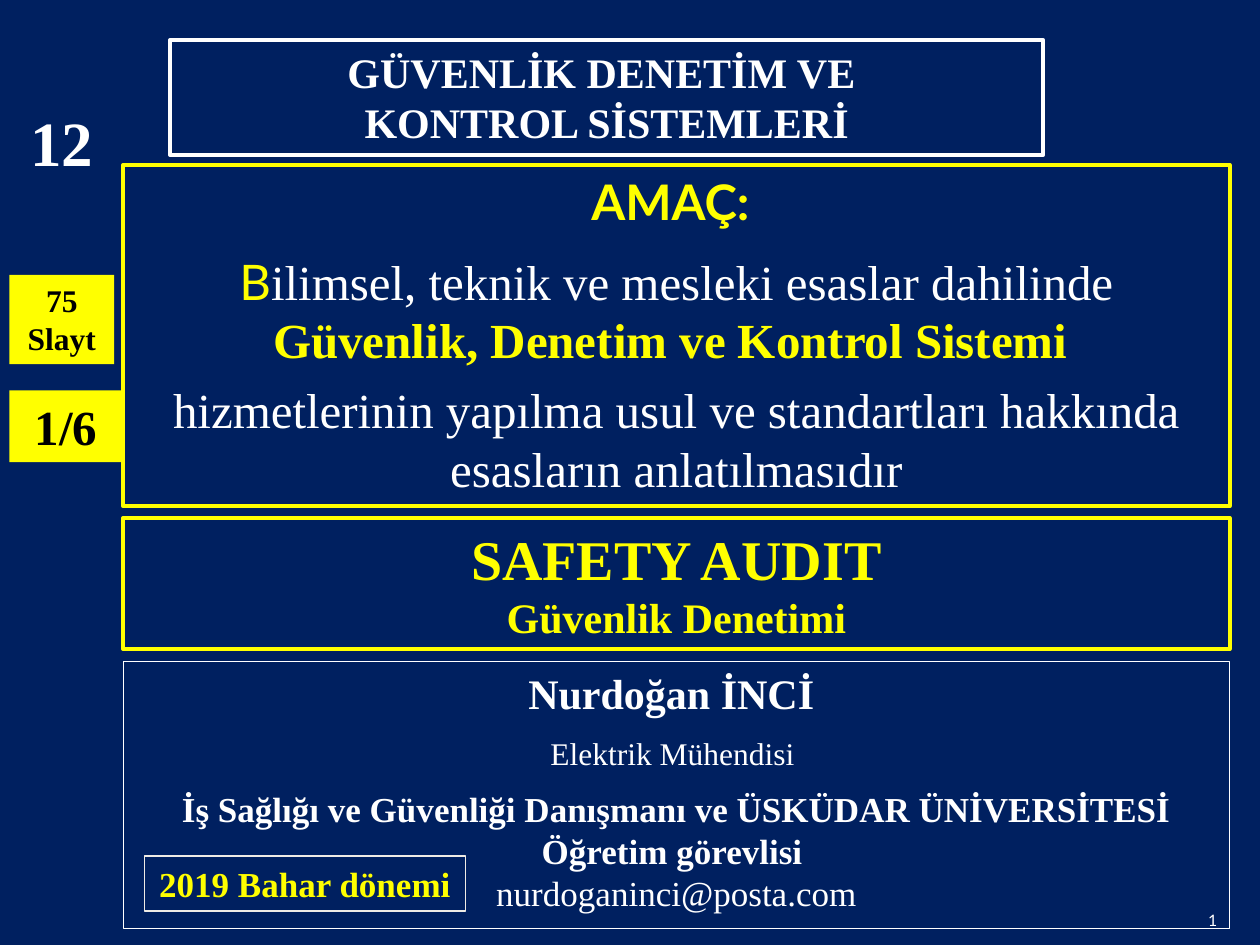
from pptx import Presentation
from pptx.dml.color import RGBColor
from pptx.enum.shapes import MSO_SHAPE as Shape
from pptx.enum.text import MSO_ANCHOR as Anchor, MSO_AUTO_SIZE as AutoSize, PP_ALIGN as Align
from pptx.util import Pt

COLORS = {"navy": "002060", "white": "FFFFFF", "yellow": "FFFF00",
          "black": "000000", "cream": "EFEBE5"}
SERIF, SANS = "Times New Roman", "Lato"


def rgb(name):
    return RGBColor.from_string(COLORS[name])


def style(font, size, color, bold=True, name=SERIF):
    font.size, font.bold, font.name = Pt(size), bold, name
    font.color.rgb = rgb(color)


def place(shape, box):
    shape.left, shape.top, shape.width, shape.height = (Pt(value) for value in box)


def prepare_frame(shape, anchor=Anchor.TOP):
    frame = shape.text_frame
    frame.word_wrap = True
    frame.auto_size = AutoSize.NONE
    frame.vertical_anchor = anchor
    return frame


def outline(shape, color, width):
    shape.line.color.rgb = rgb(color)
    shape.line.width = Pt(width)


def add_panel(slide, box, line=None, width=0, fill=None):
    shape = slide.shapes.add_shape(Shape.RECTANGLE, 0, 0, 0, 0)
    place(shape, box)
    shape.shadow.inherit = False
    if fill:
        shape.fill.solid()
        shape.fill.fore_color.rgb = rgb(fill)
    else:
        shape.fill.background()
    if line:
        outline(shape, line, width)
    else:
        shape.line.fill.background()
    return prepare_frame(shape)


def add_paragraph(frame, text, size, color, bold=True, name=SERIF,
                  before=0, align=Align.CENTER):
    first = frame.paragraphs[0]
    paragraph = frame.add_paragraph() if first.runs else first
    paragraph.alignment = align
    paragraph.space_before = Pt(before)
    if text:
        paragraph.add_run().text = text
    style(paragraph.font, size, color, bold, name)
    return paragraph


def add_title(slide, box):
    title = slide.shapes.title
    place(title, box)
    outline(title, "white", 2.25)
    frame = prepare_frame(title)
    for text in ("GÜVENLİK DENETİM VE ", "KONTROL SİSTEMLERİ"):
        add_paragraph(frame, text, 24, "white").line_spacing = 1


def add_purpose(slide, box):
    frame = add_panel(slide, box, "yellow", 2.25)
    add_paragraph(frame, "AMAÇ: ", 28, "yellow", name=SANS)
    sentence = add_paragraph(frame, "", 28, "white", before=12)
    for text, color, bold, name in (
            ("B", "yellow", False, SANS),
            ("ilimsel, teknik ve mesleki esaslar dahilinde ", "white", False, SERIF),
            ("Güvenlik, Denetim ve Kontrol Sistemi ", "yellow", True, SERIF)):
        run = sentence.add_run()
        run.text = text
        style(run.font, 28, color, bold, name)
    add_paragraph(frame, "hizmetlerinin yapılma usul ve standartları hakkında "
                  "esasların anlatılmasıdır", 28, "white", False, before=6)


def add_audit(slide, box):
    frame = add_panel(slide, box, "yellow", 2.25)
    add_paragraph(frame, "SAFETY AUDIT", 32, "yellow")
    add_paragraph(frame, "Güvenlik Denetimi", 24, "yellow")


def add_lecturer(slide, box):
    frame = add_panel(slide, box, "white", 0.75)
    add_paragraph(frame, "Nurdoğan İNCİ ", 24, "white")
    add_paragraph(frame, "Elektrik Mühendisi ", 18, "white", False, before=9)
    add_paragraph(frame, "İş Sağlığı ve Güvenliği Danışmanı ve ÜSKÜDAR ÜNİVERSİTESİ "
                  "Öğretim görevlisi ", 20, "white", before=9)
    add_paragraph(frame, "nurdoganinci@posta.com", 20, "white", False)

    left, top, _, height = box
    term = add_panel(slide, (left + 12, top + height - 41.5, 183.6, 31.5), "cream", 0.75)
    add_paragraph(term, "2019 Bahar dönemi", 20, "yellow")


def add_side_labels(slide, box):
    left, top, width, _ = box
    for offset, extra, height, text, size, color, fill in (
            (0, 0, 51, "12", 36, "white", None),
            (101.5, 0, 51, "75 Slayt", 18, "black", "yellow"),
            (167.5, 5, 41, "1/6", 28, "black", "yellow")):
        frame = add_panel(slide, (left, top + offset, width + extra, height), fill=fill)
        add_paragraph(frame, text, size, color)


def add_page_number(slide, box):
    text_box = slide.shapes.add_textbox(0, 0, 0, 0)
    place(text_box, box)
    frame = prepare_frame(text_box, Anchor.BOTTOM)
    frame.margin_top = frame.margin_bottom = 0
    add_paragraph(frame, "1", 9, "white", False, SANS, align=Align.RIGHT)


def main():
    presentation = Presentation()
    presentation.slide_width, presentation.slide_height = Pt(720), Pt(540)
    slide = presentation.slides.add_slide(presentation.slide_layouts[5])
    slide.background.fill.solid()
    slide.background.fill.fore_color.rgb = rgb("navy")

    left, width = 70.4, 632.3
    add_title(slide, (97.2, 23, 499, 65.5))
    add_purpose(slide, (left, 94.3, width, 195))
    add_lecturer(slide, (left, 378, width, 152.6))
    add_side_labels(slide, (5.3, 55.6, 60, 210))
    add_page_number(slide, (612, 510.5, 90.7, 20.5))
    add_audit(slide, (left, 296, width, 75))
    presentation.save("out.pptx")


if __name__ == "__main__":
    main()
